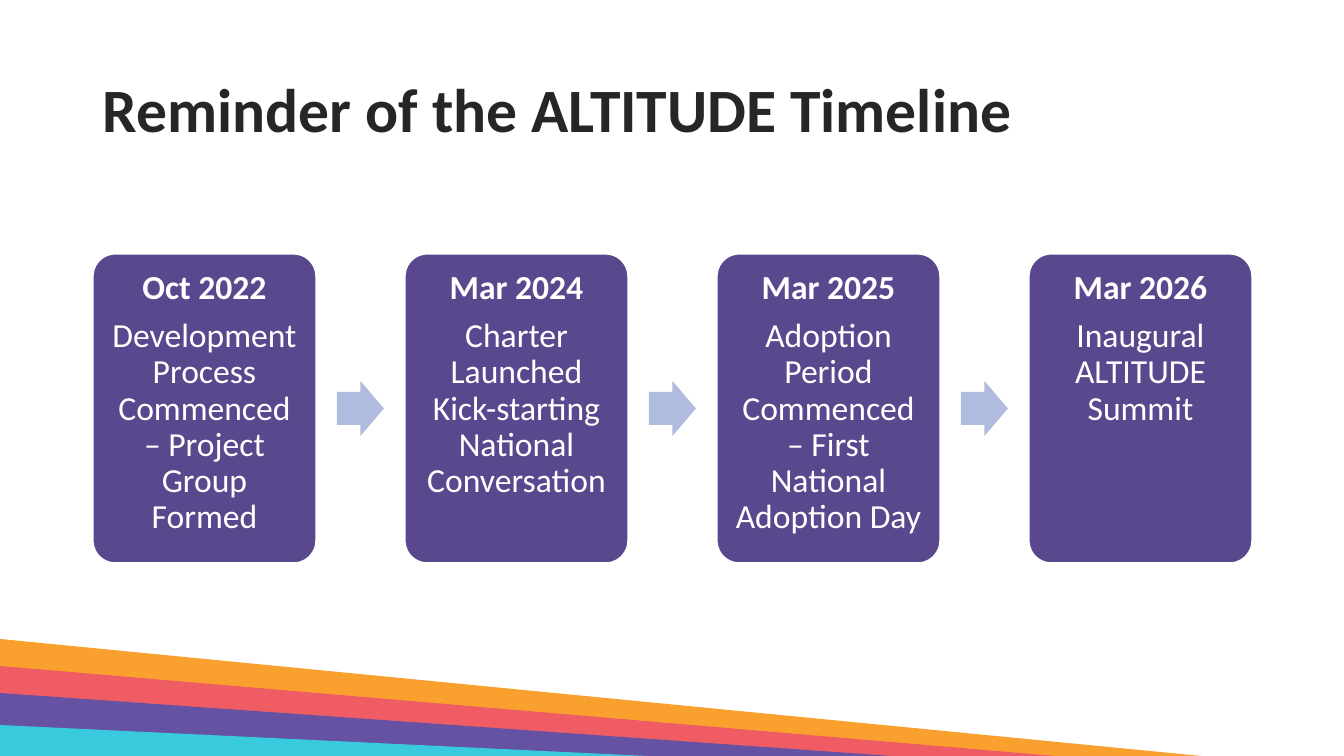
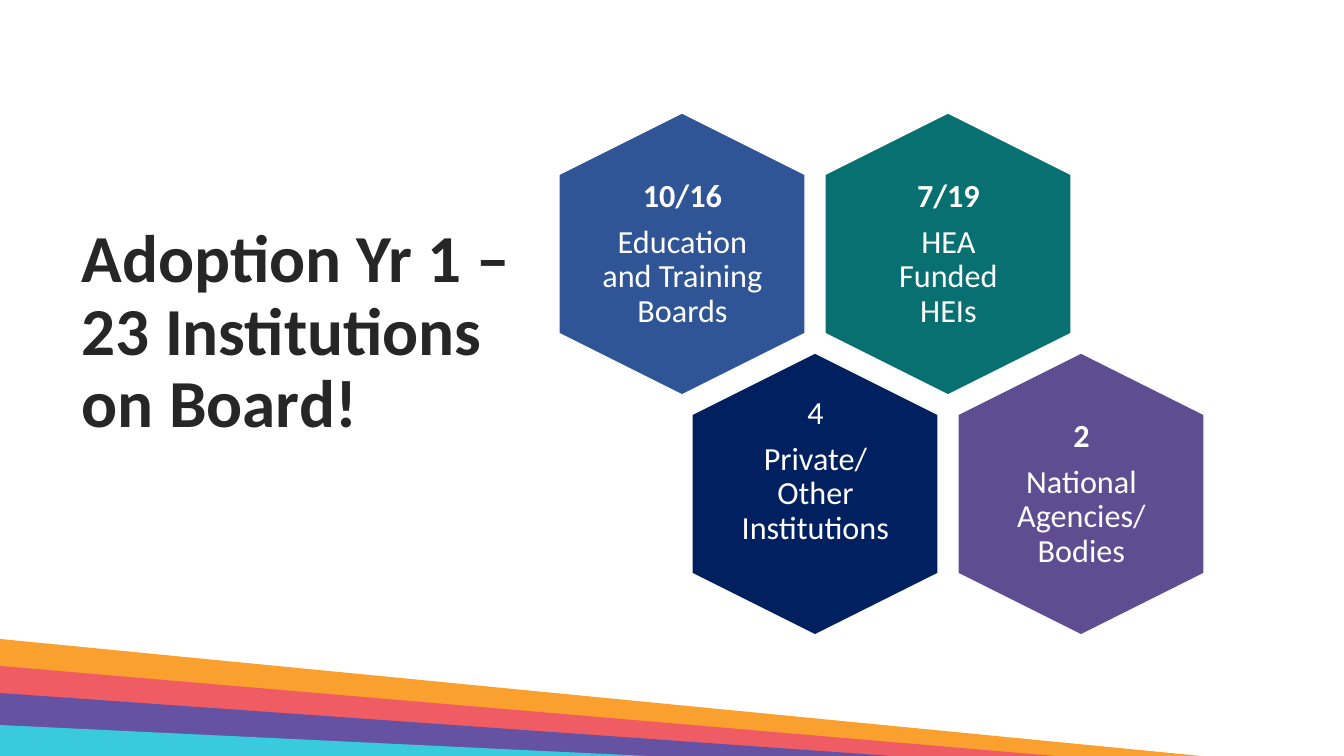
import pptx
import pptx.dml.color
import pptx.enum.shapes
import pptx.enum.text
import pptx.util

RGBColor = pptx.dml.color.RGBColor
SHAPES = pptx.enum.shapes.MSO_SHAPE
ANCHOR = pptx.enum.text.MSO_ANCHOR
ALIGN = pptx.enum.text.PP_ALIGN

WHITE = RGBColor(0xFF, 0xFF, 0xFF)
INK = RGBColor(0x26, 0x26, 0x26)
ORANGE = RGBColor(0xF9, 0xA0, 0x2F)
CORAL = RGBColor(0xF0, 0x5C, 0x64)
PURPLE = RGBColor(0x65, 0x52, 0xA3)
CYAN = RGBColor(0x3A, 0xCA, 0xDD)
CARD_PURPLE = RGBColor(0x59, 0x48, 0x8E)
ARROW_BLUE = RGBColor(0xB0, 0xBC, 0xDE)
BLUE = RGBColor(0x2F, 0x55, 0x97)
TEAL = RGBColor(0x08, 0x70, 0x70)
NAVY = RGBColor(0x00, 0x20, 0x60)
VIOLET = RGBColor(0x5F, 0x4D, 0x91)

FONT = "Calibri"
WIDTH, HEIGHT = 1344, 756
EMU_PER_PX = 914400 / 100.8

# Width, height and colour of each corner band, back to front
BANDS = [
    (1201, 117, ORANGE),
    (1055, 90, CORAL),
    (892, 63, PURPLE),
    (648, 31, CYAN),
]

MILESTONES = [
    ("Oct 2022", "Development Process Commenced – Project Group Formed"),
    ("Mar 2024", "Charter Launched Kick-starting National Conversation"),
    ("Mar 2025", "Adoption Period Commenced – First National Adoption Day"),
    ("Mar 2026", "Inaugural ALTITUDE Summit"),
]
CARD_LEFT, CARD_TOP, CARD_WIDTH, CARD_HEIGHT = 93, 254, 223, 309
CARD_PITCH = 312
ARROW_WIDTH, ARROW_HEIGHT = 47, 55

HEX_ROWS = [
    [
        dict(color=BLUE, count="10/16", label="Education and Training Boards", inset=0),
        dict(color=TEAL, count="7/19", label="HEA Funded HEIs"),
    ],
    [
        dict(color=NAVY, count="4", label="Private/ Other Institutions",
             bold=False, lift=23),
        dict(color=VIOLET, count="2", label="National Agencies/ Bodies", inset=0),
    ],
]
HEX_X, HEX_Y = 682, 254
HEX_PITCH_X, HEX_PITCH_Y = 266, 240
HEX_WIDTH, HEX_HEIGHT = 246, 282
HEX_TEXT_WIDTH, HEX_TEXT_HEIGHT = 169, 195


def px(length):
    return pptx.util.Emu(round(length * EMU_PER_PX))


class Deck:
    def __init__(self):
        self.presentation = pptx.Presentation()
        self.presentation.slide_width = px(WIDTH)
        self.presentation.slide_height = px(HEIGHT)
        self.slide = None

    def start_slide(self, title, box, size):
        """Add a slide with the shared bands and title style."""
        layout = self.presentation.slide_layouts[6]
        self.slide = self.presentation.slides.add_slide(layout)
        for width, height, color in BANDS:
            self.shape(SHAPES.RIGHT_TRIANGLE, (0, HEIGHT - height, width, height), color)
        frame = self.text_box(box)
        frame.text = title
        frame.vertical_anchor = ANCHOR.MIDDLE
        self.format(frame.paragraphs[0], size, INK, True)

    def shape(self, kind, box, fill, outlined=False):
        shape = self.slide.shapes.add_shape(kind, *map(px, box))
        shape.shadow.inherit = False
        shape.fill.solid()
        shape.fill.fore_color.rgb = fill
        if outlined:
            shape.line.color.rgb = WHITE
            shape.line.width = pptx.util.Pt(1)
        else:
            shape.line.fill.background()
        return shape

    def text_box(self, box):
        frame = self.slide.shapes.add_textbox(*map(px, box)).text_frame
        frame.word_wrap = True
        return frame

    def format(self, paragraph, size, color, bold):
        paragraph.line_spacing = 0.9
        font = paragraph.runs[0].font
        font.name = FONT
        font.size = pptx.util.Pt(size)
        font.bold = bold
        font.color.rgb = color

    def heading_and_body(self, frame, heading, body, size, anchor, inset=10, bold=True):
        frame.word_wrap = True
        frame.vertical_anchor = anchor
        frame.margin_left = frame.margin_right = px(inset)
        frame.margin_top = frame.margin_bottom = px(inset)
        frame.text = f"{heading}\n{body}"
        for paragraph, is_bold in zip(frame.paragraphs, (bold, False)):
            paragraph.alignment = ALIGN.CENTER
            paragraph.space_after = pptx.util.Pt(round(size * 0.35, 1))
            self.format(paragraph, size, WHITE, is_bold)

    def card(self, left, date, event):
        box = (left, CARD_TOP, CARD_WIDTH, CARD_HEIGHT)
        card = self.shape(SHAPES.ROUNDED_RECTANGLE, box, CARD_PURPLE, outlined=True)
        card.adjustments[0] = 0.1
        self.heading_and_body(card.text_frame, date, event, 24, ANCHOR.TOP)

    def arrow(self, center_x):
        top = CARD_TOP + (CARD_HEIGHT - ARROW_HEIGHT) // 2
        box = (center_x - ARROW_WIDTH // 2, top, ARROW_WIDTH, ARROW_HEIGHT)
        arrow = self.shape(SHAPES.RIGHT_ARROW, box, ARROW_BLUE)
        arrow.adjustments[0] = 0.6
        arrow.adjustments[1] = 0.5

    def hexagon(self, x, y, color, count, label, inset=10, bold=True, lift=0):
        """Draw a pointed-top hexagon centred on x, y; lift raises its text."""
        box = (x - HEX_HEIGHT // 2, y - HEX_WIDTH // 2, HEX_HEIGHT, HEX_WIDTH)
        self.shape(SHAPES.HEXAGON, box, color, outlined=True).rotation = 90
        frame = self.text_box((x - HEX_TEXT_WIDTH // 2, y - HEX_TEXT_HEIGHT // 2 - lift,
                               HEX_TEXT_WIDTH, HEX_TEXT_HEIGHT))
        self.heading_and_body(frame, count, label, 23, ANCHOR.MIDDLE, inset, bold)


def timeline_slide(deck):
    deck.start_slide("Reminder of the ALTITUDE Timeline", (93, 40, 1159, 146), 44)
    gap_center = (CARD_WIDTH + CARD_PITCH) // 2
    for index, (date, event) in enumerate(MILESTONES):
        left = CARD_LEFT + index * CARD_PITCH
        deck.card(left, date, event)
        if index < len(MILESTONES) - 1:
            deck.arrow(left + gap_center)


def adoption_slide(deck):
    deck.start_slide("Adoption Yr 1 – 23 Institutions on Board!", (72, 127, 451, 413), 48)
    for row, group in enumerate(HEX_ROWS):
        for column, institution in enumerate(group):
            x = HEX_X + column * HEX_PITCH_X + row * HEX_PITCH_X // 2
            deck.hexagon(x, HEX_Y + row * HEX_PITCH_Y, **institution)


def main():
    deck = Deck()
    timeline_slide(deck)
    adoption_slide(deck)
    deck.presentation.save("out.pptx")


if __name__ == "__main__":
    main()
